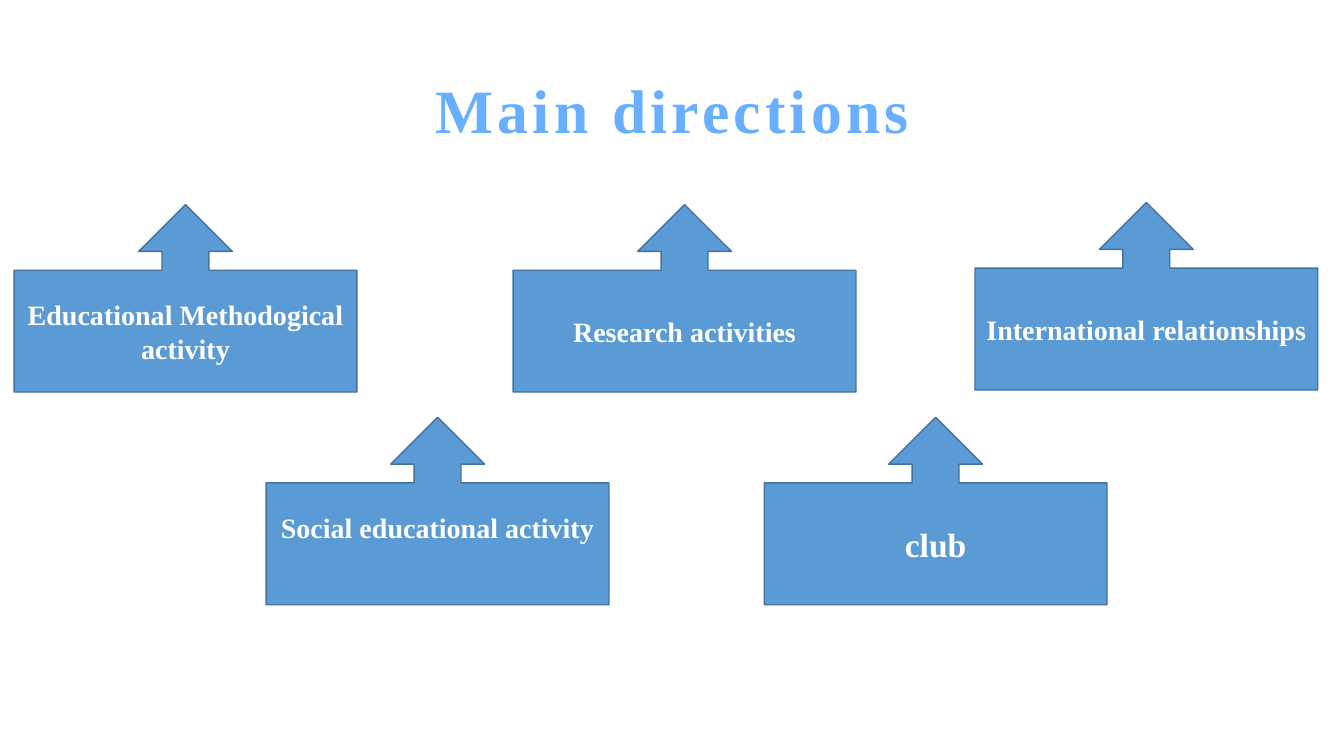
from dataclasses import dataclass

from lxml import etree
from pptx import Presentation
from pptx import util as u
from pptx.dml.color import RGBColor
from pptx.enum import shapes, text

A = "http://schemas.openxmlformats.org/drawingml/2006/main"


@dataclass(frozen=True)
class Theme:
    font: str = "Times New Roman"
    fill: str = "5B9BD5"
    line: str = "43739E"
    label: str = "FFFFFF"
    title_top: str = "69AFFF"
    title_bottom: str = "2D74B4"
    title_outline: str = "F5F7FB"
    title_size: int = 44
    label_size: int = 20
    club_size: int = 24


THEME = Theme()
CALLOUT_W, CALLOUT_H = 3.4, 1.86
LABEL_LINE = 0.32  # height of one label line, in inches


def add_run(tf, words, size):
    """Add one centred bold run to the first paragraph."""
    p = tf.paragraphs[0]
    p.alignment = text.PP_ALIGN.CENTER
    r = p.add_run()
    r.text = words
    r.font.size = u.Pt(size)
    r.font.bold = True
    r.font.name = THEME.font
    return r


def style_title_run(r):
    """Give the title its outline, gradient, shadow and letter spacing."""
    rPr = r.font._element
    rPr.set("spc", "300")
    effects = etree.fromstring(
        f'<a:x xmlns:a="{A}">'
        f'<a:ln w="11430"><a:solidFill><a:srgbClr val="{THEME.title_outline}"/>'
        '</a:solidFill></a:ln>'
        '<a:gradFill><a:gsLst>'
        f'<a:gs pos="10000"><a:srgbClr val="{THEME.title_top}"/></a:gs>'
        f'<a:gs pos="75000"><a:srgbClr val="{THEME.title_bottom}"/></a:gs>'
        '</a:gsLst><a:lin ang="5400000"/></a:gradFill>'
        '<a:effectLst><a:outerShdw blurRad="25400" dist="25400" dir="2700000">'
        f'<a:srgbClr val="{THEME.title_top}"><a:alpha val="50000"/></a:srgbClr>'
        '</a:outerShdw></a:effectLst></a:x>')
    for i, part in enumerate(list(effects)):
        rPr.insert(i, part)


def add_title(s, words):
    sp = s.shapes.add_textbox(*map(u.Inches, (0.92, 0.4, 11.5, 1.45)))
    tf = sp.text_frame
    tf.word_wrap = True
    tf.vertical_anchor = text.MSO_ANCHOR.MIDDLE
    style_title_run(add_run(tf, words, THEME.title_size))
    tf.paragraphs[0].line_spacing = 0.9


def add_callout(s, left, top, words, size, raised=0):
    """Add an up-arrow box; raised is extra space below its label."""
    sp = s.shapes.add_shape(
        shapes.MSO_SHAPE.UP_ARROW_CALLOUT,
        *map(u.Inches, (left, top, CALLOUT_W, CALLOUT_H)))
    sp.shadow.inherit = False
    sp.fill.solid()
    sp.fill.fore_color.rgb = RGBColor.from_string(THEME.fill)
    sp.line.color.rgb = RGBColor.from_string(THEME.line)
    sp.line.width = u.Pt(1)
    tf = sp.text_frame
    tf.word_wrap = True
    tf.vertical_anchor = text.MSO_ANCHOR.MIDDLE
    tf.margin_bottom = u.Inches(0.05 + raised)
    r = add_run(tf, words, size)
    r.font.color.rgb = RGBColor.from_string(THEME.label)


def main():
    prs = Presentation()
    prs.slide_width, prs.slide_height = u.Inches(13.33), u.Inches(7.5)
    s = prs.slides.add_slide(prs.slide_layouts[6])

    add_title(s, "Main directions")

    # Upper row
    add_callout(s, 0.14, 2.03, "Educational Methodogical activity", THEME.label_size)
    add_callout(s, 5.09, 2.03, "Research activities", THEME.label_size)
    add_callout(s, 9.67, 2.01, "International relationships", THEME.label_size)

    # Lower row
    add_callout(s, 2.64, 4.14, "Social educational activity", THEME.label_size,
                raised=LABEL_LINE)
    add_callout(s, 7.58, 4.14, "club", THEME.club_size)

    prs.save("out.pptx")


if __name__ == "__main__":
    main()
